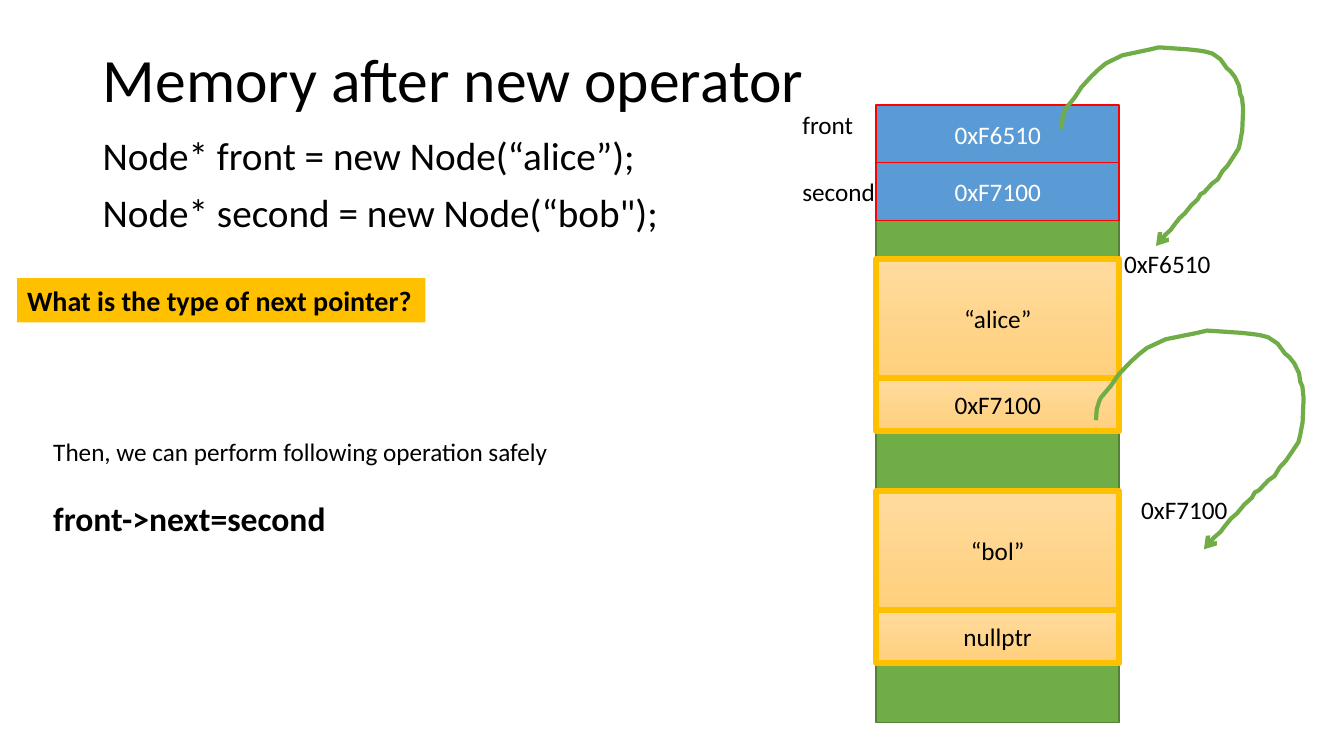
from dataclasses import dataclass
from typing import Optional

from lxml import etree
from pptx import Presentation
from pptx.dml.color import RGBColor
from pptx.enum import shapes, text
from pptx.oxml import ns
from pptx.util import Inches, Pt

BLACK = RGBColor(0x00, 0x00, 0x00)
WHITE = RGBColor(0xFF, 0xFF, 0xFF)
RED = RGBColor(0xFF, 0x00, 0x00)
BLUE = RGBColor(0x5B, 0x9B, 0xD5)
GREEN = RGBColor(0x70, 0xAD, 0x47)
DARK_GREEN = RGBColor(0x53, 0x81, 0x35)
GOLD = RGBColor(0xFF, 0xC0, 0x00)
LIGHT_ORANGE = RGBColor(0xFF, 0xDB, 0x9E)
ORANGE = RGBColor(0xFF, 0xD0, 0x7C)

FONT = "Calibri"
MEMORY_LEFT, MEMORY_WIDTH = 8.69, 2.41
POINTER_HEIGHT = 0.58
DATA_HEIGHT, NEXT_HEIGHT = 1.18, 0.53


@dataclass
class Style:
    fill: RGBColor
    line: RGBColor
    line_width: float
    font: RGBColor = BLACK
    fill_end: Optional[RGBColor] = None


@dataclass
class Cell:
    label: str
    top: float
    height: float
    style: Style


@dataclass
class Line:
    words: str
    size: float
    bold: bool = False
    before: float = 0
    spacing: float = 1.0


@dataclass
class Box:
    left: float
    top: float
    width: float
    height: float
    lines: list[Line]
    wrap: bool = False
    fill: Optional[RGBColor] = None


@dataclass
class Arrow:
    left: float
    top: float
    width: float
    height: float


HEAP = Style(GREEN, DARK_GREEN, 1)
POINTER = Style(BLUE, RED, 1, WHITE)
NODE = Style(LIGHT_ORANGE, GOLD, 4.5, fill_end=ORANGE)


def node(top: float, data: str, next_pointer: str) -> list[Cell]:
    return [Cell(data, top, DATA_HEIGHT, NODE),
            Cell(next_pointer, top + DATA_HEIGHT, NEXT_HEIGHT, NODE)]


def label(left: float, top: float, width: float, words: str) -> Box:
    return Box(left, top, width, 0.4, [Line(words, 18)])


CELLS = [
    Cell("", 1.62, 5.55, HEAP),
    Cell("0xF6510", 1.04, POINTER_HEIGHT, POINTER),
    *node(2.57, "“alice”", "0xF7100"),
    *node(4.87, "“bol”", "nullptr"),
    Cell("0xF7100", 1.61, POINTER_HEIGHT, POINTER),
]

BOXES = [
    Box(0.92, 1.31, 11.5, 2.59, [
        Line("Node* front = new Node(“alice”);", 28, before=10, spacing=0.9),
        Line("Node* second = new Node(“bob\");", 28, before=10, spacing=0.9),
    ], wrap=True),
    label(7.86, 1.04, 0.71, "front"),
    label(7.86, 1.7, 0.93, "second"),
    label(11.05, 2.41, 1.07, "0xF6510"),
    label(11.22, 4.85, 1.07, "0xF7100"),
    Box(0.17, 2.76, 4.05, 0.44,
        [Line("What is the type of next pointer?", 20, bold=True)], fill=GOLD),
    Box(0.43, 4.28, 5.17, 1.11, [
        Line("Then, we can perform following operation safely", 18),
        Line("front->next=second", 24, bold=True, before=22),
    ]),
]

# Both pointer arrows share one hand-drawn curve, in percent of their box
ARROWS = [Arrow(10.53, 0.47, 1.8, 1.97), Arrow(10.87, 3.28, 2.06, 2.17)]
CURVE = [
    (0, 41), (0.4, 36), (1.7, 32), (2.5, 30.5), (7, 25.5), (11, 20), (16.5, 14.5),
    (20.5, 11), (24.5, 8), (29, 6), (33.5, 4), (49, 1), (53.5, 0), (69.5, 1),
    (75.5, 1.6), (79, 2.1), (83, 3.1), (86, 5), (87.5, 6), (91, 10.5), (93, 12),
    (95.5, 15), (97.8, 19.5), (98.4, 23.5), (99.4, 25.5), (100, 31), (99.5, 42),
    (98.9, 45), (98.3, 48), (97.5, 51), (91.5, 59.5), (88.5, 62.5), (86, 66.5),
    (83, 68.5), (80.5, 71), (78.5, 73), (76.5, 74), (75, 76.5), (71.5, 79.5),
    (68, 83.5), (65, 86), (62, 89.5), (60, 92), (57, 94.5), (55.5, 96),
    (53.7, 98.5), (52, 100),
]


def add_cell(slide, cell: Cell) -> None:
    s = slide.shapes.add_shape(
        shapes.MSO_SHAPE.RECTANGLE, Inches(MEMORY_LEFT), Inches(cell.top),
        Inches(MEMORY_WIDTH), Inches(cell.height))
    s.shadow.inherit = False
    style = cell.style
    if style.fill_end is None:
        s.fill.solid()
        s.fill.fore_color.rgb = style.fill
    else:
        s.fill.gradient()
        s.fill.gradient_angle = 270
        for stop, color in zip(s.fill.gradient_stops, (style.fill, style.fill_end)):
            stop.color.rgb = color
    s.line.color.rgb = style.line
    s.line.width = Pt(style.line_width)
    if cell.label:
        tf = s.text_frame
        tf.vertical_anchor = text.MSO_ANCHOR.MIDDLE
        p = tf.paragraphs[0]
        p.text = cell.label
        p.alignment = text.PP_ALIGN.CENTER
        format_font(p, 18, style.font)


def format_font(p, size: float, color: RGBColor = BLACK, bold: bool = False) -> None:
    p.font.name = FONT
    p.font.size = Pt(size)
    p.font.bold = bold
    p.font.color.rgb = color


def add_box(slide, box: Box) -> None:
    s = slide.shapes.add_textbox(
        Inches(box.left), Inches(box.top), Inches(box.width), Inches(box.height))
    if box.fill is not None:
        s.fill.solid()
        s.fill.fore_color.rgb = box.fill
    tf = s.text_frame
    tf.word_wrap = box.wrap
    for i, line in enumerate(box.lines):
        p = tf.add_paragraph() if i else tf.paragraphs[0]
        p.text = line.words
        p.space_before = Pt(line.before)
        p.line_spacing = line.spacing
        format_font(p, line.size, bold=line.bold)


def add_arrow(slide, arrow: Arrow) -> None:
    points = [(Inches(arrow.left + arrow.width * x / 100),
               Inches(arrow.top + arrow.height * y / 100)) for x, y in CURVE]
    builder = slide.shapes.build_freeform(*points[0])
    builder.add_line_segments(points[1:], close=False)
    s = builder.convert_to_shape()
    s.shadow.inherit = False
    s.fill.background()
    s.line.color.rgb = GREEN
    s.line.width = Pt(3)
    outline = s.element.spPr.find(ns.qn("a:ln"))
    etree.SubElement(outline, ns.qn("a:tailEnd"), type="arrow")


def main() -> None:
    prs = Presentation()
    prs.slide_width, prs.slide_height = Inches(13.33), Inches(7.5)
    slide = prs.slides.add_slide(prs.slide_layouts[5])

    # Title
    title = slide.shapes.title
    title.left, title.top = Inches(0.92), Inches(0.4)
    title.width, title.height = Inches(11.5), Inches(0.83)
    title.text_frame.vertical_anchor = text.MSO_ANCHOR.MIDDLE
    p = title.text_frame.paragraphs[0]
    p.text = "Memory after new operator"
    p.alignment = text.PP_ALIGN.LEFT
    p.line_spacing = 0.9
    format_font(p, 44)

    # Memory column, texts and pointer arrows
    for cell in CELLS:
        add_cell(slide, cell)
    for box in BOXES:
        add_box(slide, box)
    for arrow in ARROWS:
        add_arrow(slide, arrow)

    prs.save("out.pptx")


if __name__ == "__main__":
    main()
